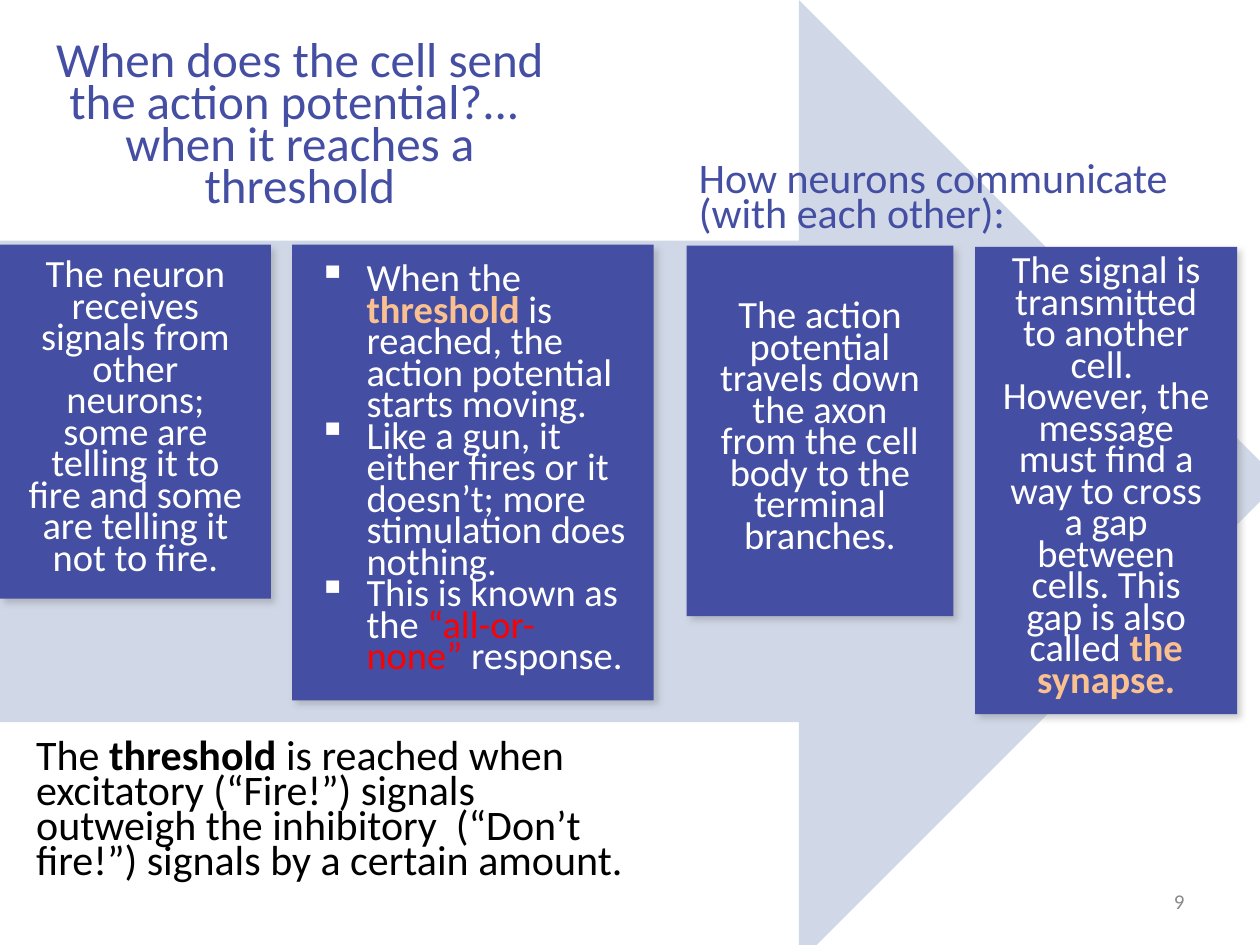
from lxml.etree import SubElement
from pptx import Presentation
from pptx.dml.color import RGBColor
from pptx.enum.shapes import MSO_SHAPE
from pptx.enum.text import MSO_ANCHOR, PP_ALIGN
from pptx.oxml.ns import qn
from pptx.util import Cm, Pt

BLUE, PALE, WHITE, BLACK = "444EA2", "D0D8E8", "FFFFFF", "000000"
PEACH, RED, GREY = "FAC090", "FF0000", "898989"
LEFT, MID, RIGHT = PP_ALIGN.LEFT, PP_ALIGN.CENTER, PP_ALIGN.RIGHT


def color(code):
    return RGBColor.from_string(code)


def add_flat(slide, kind, place, fill):
    shape = slide.shapes.add_shape(kind, *map(Cm, place))
    shape.fill.solid()
    shape.fill.fore_color.rgb = color(fill)
    shape.line.fill.background()
    shape.shadow.inherit = False
    return shape


def add_shadow(shape):
    effects = shape._element.spPr.find(qn("a:effectLst"))
    outer = SubElement(effects, qn("a:outerShdw"), blurRad=str(Pt(4)),
                       dist=str(Pt(3)), dir=str(45 * 60000), rotWithShape="0")
    tint = SubElement(outer, qn("a:srgbClr"), val="808080")
    SubElement(tint, qn("a:alpha"), val="40000")


def add_bullet(para):
    props = para._p.get_or_add_pPr()
    props.set("marL", str(Cm(0.97)))
    props.set("indent", str(Cm(-0.97)))
    SubElement(props, qn("a:buChar"), char="▪")


def add_run(para, text, size, tint, bold=False):
    run = para.add_run()
    run.text = text
    font = run.font
    font.name, font.size, font.bold = "Calibri", Pt(size), bold
    font.color.rgb = color(tint)


def write(frame, paras, size, tint, align=LEFT, space=None, bullet=False):
    """Each paragraph is a list of (text, color, bold) runs; "\\n" breaks a line."""
    frame.word_wrap = True
    for i, runs in enumerate(paras):
        para = frame.paragraphs[0] if i == 0 else frame.add_paragraph()
        para.alignment = align
        if space:
            para.line_spacing = Pt(space)
        if bullet:
            add_bullet(para)
        for text, shade, bold in runs:
            if text == "\n":
                para.add_line_break()
            else:
                add_run(para, text, size, shade or tint, bold)


def plain(text):
    return (text, None, False)


def add_card(slide, place, paras, bullet=False):
    card = add_flat(slide, MSO_SHAPE.RECTANGLE, place, BLUE)
    add_shadow(card)
    frame = card.text_frame
    frame.vertical_anchor = MSO_ANCHOR.MIDDLE
    frame.margin_left = frame.margin_right = Cm(0.53)
    frame.margin_top = frame.margin_bottom = Cm(0.53)
    write(frame, paras, 22, WHITE, LEFT if bullet else MID, 18, bullet)


def add_label(slide, place, runs, size, tint, align=LEFT, space=None,
              anchor=MSO_ANCHOR.TOP):
    frame = slide.shapes.add_textbox(*map(Cm, place)).text_frame
    frame.vertical_anchor = anchor
    write(frame, [runs], size, tint, align, space)


def main():
    deck = Presentation()
    deck.slide_width, deck.slide_height = Cm(25.4), Cm(19.05)
    slide = deck.slides.add_slide(deck.slide_layouts[6])

    # Arrow behind the steps
    add_flat(slide, MSO_SHAPE.RIGHT_ARROW, (0, 0, 25.81, 19.41), PALE)

    # Four steps
    add_card(slide, (0, 4.93, 5.46, 7.14), [[plain(
        "The neuron receives signals from other neurons; some are telling "
        "it to fire and some are telling it not to fire.")]])
    add_card(slide, (5.89, 4.93, 7.29, 9.19), [
        [plain("When the "), ("threshold", PEACH, True),
         plain(" is reached, the action potential starts moving.")],
        [plain("Like a gun, it either fires or it doesn’t; "
               "more stimulation does nothing.")],
        [plain("This is known as the "), ("“all-or-none”", RED, False),
         plain(" response.")],
    ], bullet=True)
    add_card(slide, (13.84, 4.95, 5.38, 7.47), [[plain(
        "The action potential travels down the axon from the cell body "
        "to the terminal branches.")]])
    add_card(slide, (19.66, 4.98, 5.28, 9.42), [[
        plain("The signal is transmitted to another cell.  However, the "
              "message must find a way to cross a gap between cells. "
              "This gap is also called "),
        ("the synapse.", PEACH, True)]])

    # Headings
    add_label(slide, (13.84, 3.23, 10.34, 1.68),
              [plain("How neurons communicate"), plain("\n"),
               plain("(with each other):")], 24, BLUE, space=20)
    add_label(slide, (0.48, 0.66, 11.13, 3.89),
              [plain("When does the cell send the action potential?...  "
                     "when it reaches a threshold")],
              28, BLUE, MID, 24, MSO_ANCHOR.MIDDLE)

    # Note and page number
    add_label(slide, (0.48, 14.88, 12.7, 3.15),
              [plain("The "), ("threshold ", None, True),
               plain("is reached when excitatory (“Fire!”) signals outweigh "
                     "the inhibitory  (“Don’t fire!”) signals by a certain "
                     "amount.")], 24, BLACK, space=20)
    add_label(slide, (18.21, 17.65, 5.92, 1.02), [plain("9")], 12, GREY,
              RIGHT, anchor=MSO_ANCHOR.MIDDLE)

    deck.save("out.pptx")


if __name__ == "__main__":
    main()
